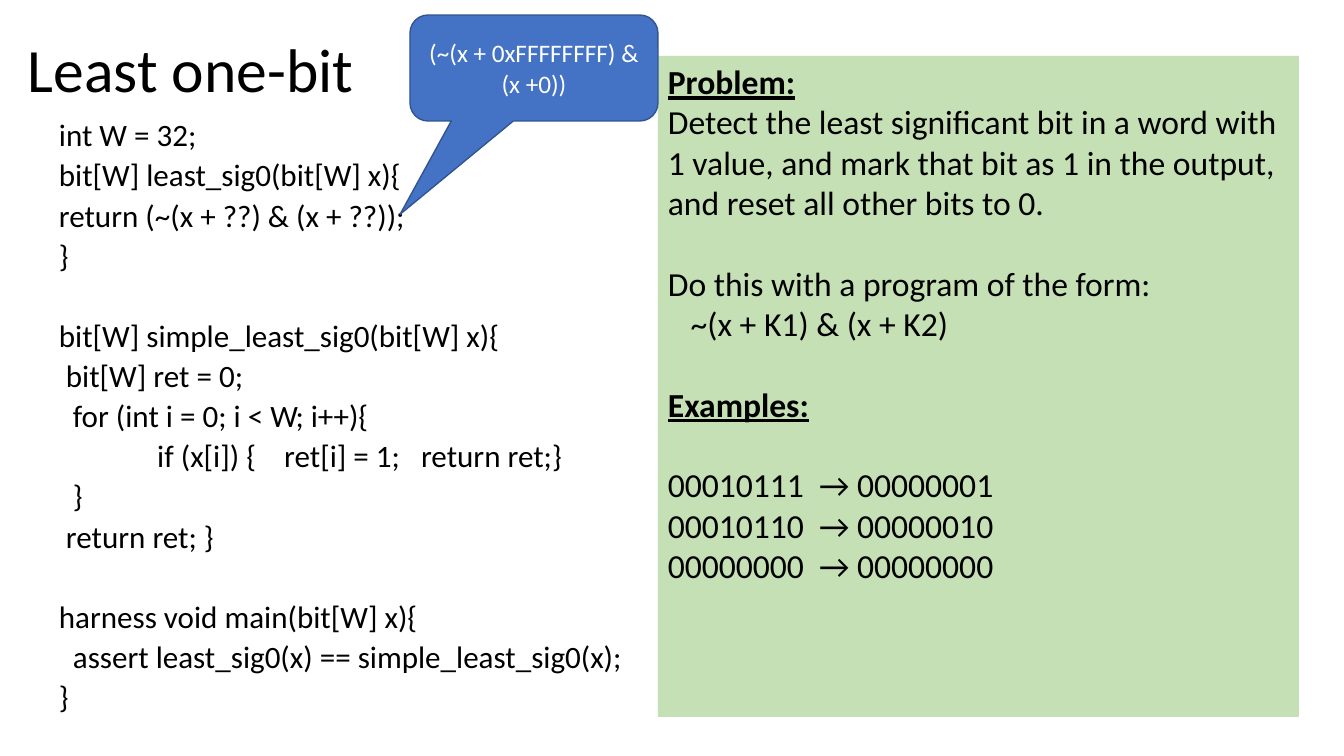
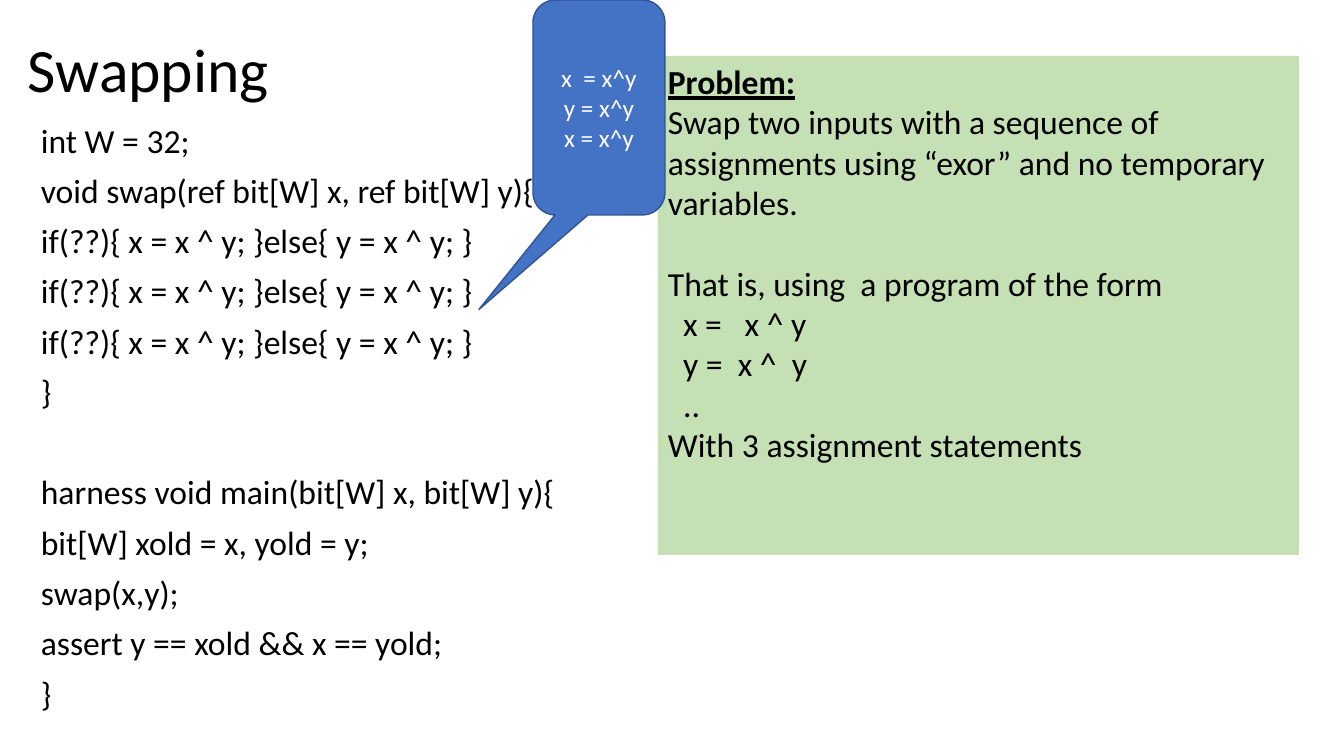
from pptx import Presentation
from pptx.dml.color import RGBColor
from pptx.enum.shapes import MSO_SHAPE
from pptx.enum.text import MSO_ANCHOR, PP_ALIGN
from pptx.util import Pt

SCALE = 914400 / 100.8
FONT = "Calibri"
BLACK = RGBColor(0x00, 0x00, 0x00)
WHITE = RGBColor(0xFF, 0xFF, 0xFF)
GREEN = RGBColor(0xC5, 0xE0, 0xB4)
BLUE = RGBColor(0x44, 0x72, 0xC4)
NAVY = RGBColor(0x32, 0x54, 0x91)
RECT = MSO_SHAPE.RECTANGLE
BUBBLE = MSO_SHAPE.ROUNDED_RECTANGULAR_CALLOUT
TOP, MIDDLE = MSO_ANCHOR.TOP, MSO_ANCHOR.MIDDLE
LEFT, CENTER = PP_ALIGN.LEFT, PP_ALIGN.CENTER
HEADS = ("Problem:", "Examples:")
LINE = 1.2
SPACE = 0.226

TITLE_BOX = (18, 0, 1159, 146)
SWAP = "if(??){ x = x ^ y; }else{ y = x ^ y; }"

SLIDES = [
    {
        "title": "Least one-bit",
        "code": {
            "box": (49, 121, 641, 608),
            "size": 22.2,
            "pitch": 0.7,
            "rows": [
                "int W = 32;",
                "bit[W] least_sig0(bit[W] x){",
                "return (~(x + ??) & (x + ??));",
                "}",
                "",
                "bit[W] simple_least_sig0(bit[W] x){",
                " bit[W] ret = 0;",
                "  for (int i = 0; i < W; i++){",
                "              if (x[i]) {    ret[i] = 1;   return ret;}",
                "  }",
                " return ret; }",
                "",
                "harness void main(bit[W] x){",
                "  assert least_sig0(x) == simple_least_sig0(x);",
                "}",
            ],
        },
        "panel": {
            "box": (658, 56, 641, 661),
            "rows": [
                "Problem:",
                "Detect the least significant bit in a word with 1 value, "
                "and mark that bit as 1 in the output, "
                "and reset all other bits to 0.",
                "",
                "Do this with a program of the form:",
                "   ~(x + K1) & (x + K2)",
                "",
                "Examples:",
                "",
                "00010111  → 00000001",
                "00010110  → 00000010",
                "00000000  → 00000000",
            ],
        },
        "bubble": {
            "box": (410, 15, 248, 106),
            "tip": (-0.54, 1.38),
            "rows": ["(~(x + 0xFFFFFFFF) & (x +0))"],
        },
    },
    {
        "title": "Swapping",
        "code": {
            "box": (31, 119, 641, 608),
            "size": 24,
            "pitch": 0.9,
            "rows": [
                "int W = 32;",
                "void swap(ref bit[W] x, ref bit[W] y){",
                *[SWAP] * 3,
                "}",
                "",
                "harness void main(bit[W] x, bit[W] y){",
                "bit[W] xold = x, yold = y;",
                "swap(x,y);",
                "assert y == xold && x == yold;",
                "}",
            ],
        },
        "panel": {
            "box": (658, 56, 641, 499),
            "rows": [
                "Problem:",
                "Swap two inputs with a sequence of assignments using "
                "“exor” and no temporary variables.",
                "",
                "That is, using  a program of the form",
                "  x =   x ^ y",
                "  y =  x ^  y",
                "  ..",
                "With 3 assignment statements",
            ],
        },
        "bubble": {
            "box": (533, 0, 132, 215),
            "tip": (-0.91, 0.94),
            "rows": ["x  = x^y", "y = x^y", "x = x^y"],
        },
    },
]


def px(*sides):
    return [round(side * SCALE) for side in sides]


def write(shape, rows, size, color=BLACK, pitch=1.0, before=0,
          anchor=TOP, align=LEFT):
    frame = shape.text_frame
    frame.word_wrap = True
    frame.vertical_anchor = anchor
    para = frame.paragraphs[0]
    gap = 0
    for index, row in enumerate(rows):
        if not row:
            gap += size * LINE * pitch + before
            continue
        if index:
            para = frame.add_paragraph()
        text = row.lstrip()
        dent = (len(row) - len(text)) * size * SPACE
        if dent:
            para._p.get_or_add_pPr().set("marL", str(int(Pt(dent))))
        para.alignment = align
        para.line_spacing = pitch
        para.space_before = Pt(before + gap)
        gap = 0
        run = para.add_run()
        run.text = text
        font = run.font
        font.name = FONT
        font.size = Pt(size)
        font.color.rgb = color
        font.bold = font.underline = text in HEADS


def add_form(slide, kind, box, fill):
    shape = slide.shapes.add_shape(kind, *px(*box))
    shape.shadow.inherit = False
    shape.fill.solid()
    shape.fill.fore_color.rgb = fill
    return shape


def add_title(slide, box, text):
    shape = slide.shapes.add_textbox(*px(*box))
    write(shape, [text], 44, pitch=0.9, anchor=MIDDLE)


def add_code(slide, box, rows, size, pitch):
    shape = slide.shapes.add_textbox(*px(*box))
    write(shape, rows, size, pitch=pitch, before=10)


def add_panel(slide, box, rows):
    shape = add_form(slide, RECT, box, GREEN)
    shape.line.fill.background()
    write(shape, rows, 24)


def add_bubble(slide, box, tip, rows):
    shape = add_form(slide, BUBBLE, box, BLUE)
    shape.line.color.rgb = NAVY
    shape.line.width = Pt(1)
    for index, value in enumerate((*tip, 0.17)):
        shape.adjustments[index] = value
    write(shape, rows, 18, WHITE, anchor=MIDDLE, align=CENTER)


def main():
    deck = Presentation()
    deck.slide_width, deck.slide_height = px(1344, 756)
    for item in SLIDES:
        slide = deck.slides.add_slide(deck.slide_layouts[6])
        add_title(slide, TITLE_BOX, item["title"])
        add_code(slide, **item["code"])
        add_panel(slide, **item["panel"])
        add_bubble(slide, **item["bubble"])
    deck.save("out.pptx")


if __name__ == "__main__":
    main()
